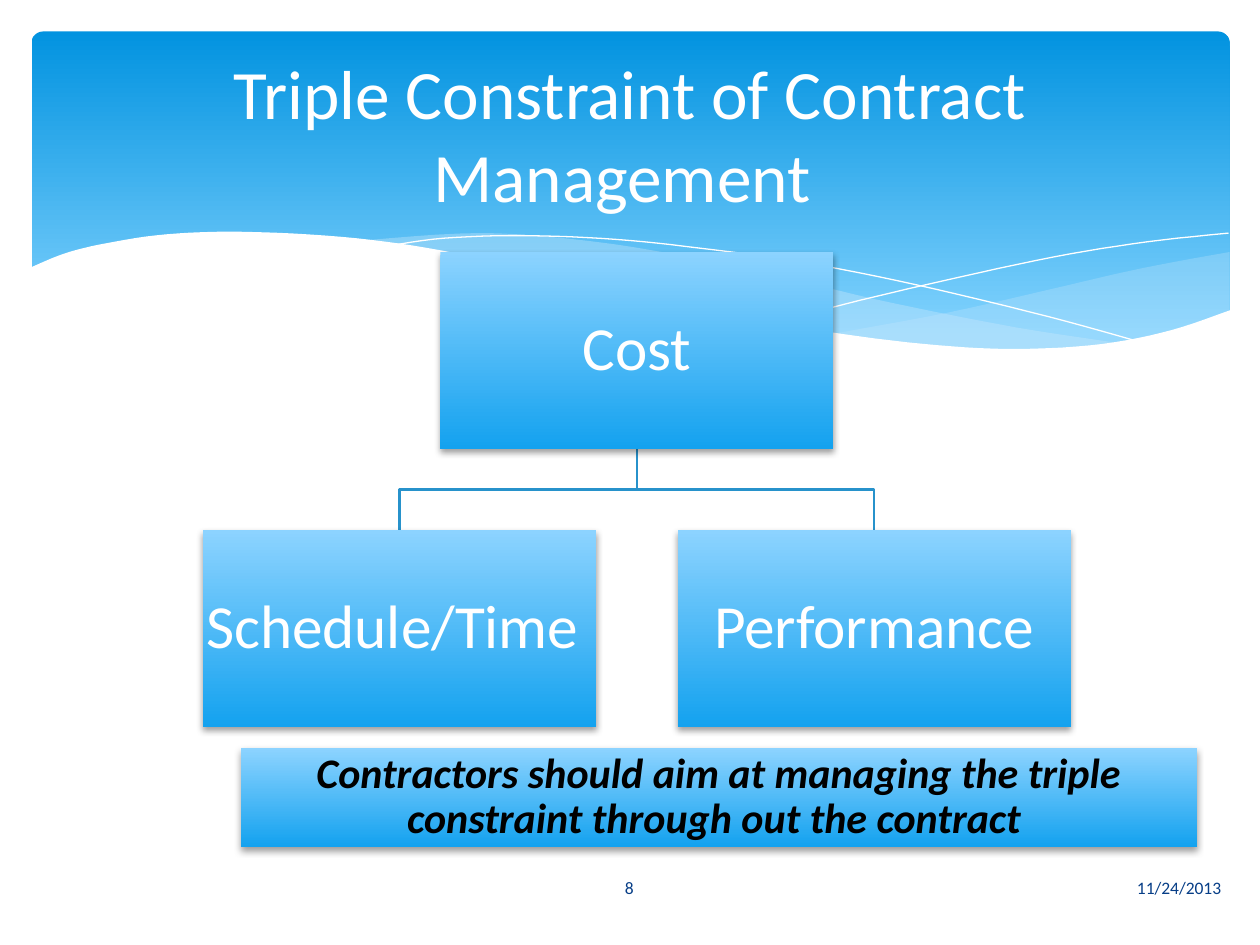
import pptx
import pptx.util
from lxml import etree
from pptx.dml.color import RGBColor
from pptx.enum.shapes import MSO_SHAPE
from pptx.enum.text import MSO_ANCHOR, MSO_AUTO_SIZE, PP_ALIGN
from pptx.oxml.ns import qn
from pptx.util import Inches, Pt

WHITE = RGBColor(0xFF, 0xFF, 0xFF)
BLACK = RGBColor(0x00, 0x00, 0x00)
NAVY = RGBColor(0x07, 0x3E, 0x87)
BANNER_TOP = RGBColor(0x02, 0x93, 0xE0)
BANNER_END = RGBColor(0x83, 0xD3, 0xFE)
MIST = RGBColor(0xC6, 0xE7, 0xFC)
BOX_TOP = RGBColor(0x8C, 0xD3, 0xFF)
BOX_END = RGBColor(0x14, 0xA2, 0xEF)
BRANCH = RGBColor(0x27, 0x92, 0xCB)
FONT = "Calibri"
WIDTH, HEIGHT = 10, 7.5

# Wave curves, on a grid with ten units across the slide.
RIGHT_BAND = [
    [(9.76, 2), (9.06, 2.13), (8.32, 2.3), (7.53, 2.48), (6.61, 2.65)],
    [(6.61, 2.65), (7.19, 2.72), (7.81, 2.77), (8.44, 2.77), (8.97, 2.7),
     (9.42, 2.59), (9.76, 2.47)],
]
LONG_BAND = [
    [(8.93, 2.73), (8.07, 2.6), (7.06, 2.4), (6.29, 2.22), (5.41, 2.03),
     (4.65, 1.91), (3.8, 1.85), (2.86, 1.91)],
    [(2.86, 1.91), (3.62, 2.03), (4.49, 2.22), (5.3, 2.4), (6.18, 2.58),
     (6.95, 2.7), (7.73, 2.77), (8.38, 2.78), (8.93, 2.73)],
]
FALLING_LINE = [(3.09, 1.95), (3.53, 1.89), (4.16, 1.87), (4.89, 1.9), (5.56, 1.97),
                (6.36, 2.08), (7.27, 2.26), (8.31, 2.51), (9.07, 2.72)]
RISING_LINE = [(6.13, 2.57), (6.72, 2.41), (7.48, 2.23), (8.36, 2.04), (9.1, 1.92),
               (9.75, 1.85)]
LOWER_WAVE = [
    [(9.77, 2.46), (9.3, 2.62), (8.75, 2.73), (8.09, 2.77), (7.44, 2.74), (6.68, 2.65),
     (5.79, 2.5), (5.03, 2.33), (4.18, 2.13), (3.4, 1.97), (2.71, 1.88), (1.93, 1.84),
     (1.32, 1.86), (0.85, 1.93), (0.52, 2.01), (0.23, 2.13)],
    [(0.23, 3.29), (9.77, 3.29)],
]


def smooth(knots, steps=6):
    """Points of a Catmull-Rom curve through the knots."""
    if len(knots) < 3:
        return knots
    padded = [knots[0], *knots, knots[-1]]
    points = [knots[0]]
    for a, b, c, d in zip(padded, padded[1:], padded[2:], padded[3:]):
        for step in range(1, steps + 1):
            t = step / steps
            points.append(tuple(
                0.5 * (2 * q + (r - p) * t + (2 * p - 5 * q + 4 * r - s) * t ** 2
                       + (3 * q - p - 3 * r + s) * t ** 3)
                for p, q, r, s in zip(a, b, c, d)))
    return points


def outline(page, points, close=False):
    points = [(x * 1000, y * 1000) for x, y in points]
    builder = page.shapes.build_freeform(*points[0], scale=Inches(1) / 1000)
    builder.add_line_segments(points[1:], close=close)
    shape = builder.convert_to_shape()
    shape.shadow.inherit = False
    return shape


def stroke(page, points, color, width):
    shape = outline(page, points)
    shape.fill.background()
    shape.line.color.rgb = color
    shape.line.width = Pt(width)


def gradient(shape, first, last, end=1.0):
    shape.fill.gradient()
    shape.fill.gradient_angle = 270
    for stop, color, position in zip(shape.fill.gradient_stops, (first, last), (0, end)):
        stop.color.rgb = color
        stop.position = position
    shape.line.fill.background()


def soft_shadow(shape):
    shape.shadow.inherit = False
    effects = shape.element.spPr.find(qn("a:effectLst"))
    shadow = etree.SubElement(effects, qn("a:outerShdw"), blurRad=str(Pt(4)),
                              dist=str(Pt(2)), dir="5400000", rotWithShape="0")
    color = etree.SubElement(shadow, qn("a:srgbClr"), val=str(BLACK))
    etree.SubElement(color, qn("a:alpha"), val="38000")


def write(shape, text, size, color, align=PP_ALIGN.CENTER, strong=False):
    frame = shape.text_frame
    frame.word_wrap = True
    frame.auto_size = MSO_AUTO_SIZE.NONE
    frame.vertical_anchor = MSO_ANCHOR.MIDDLE
    para = frame.paragraphs[0]
    para.alignment = align
    span = para.add_run()
    span.text = text
    span.font.name = FONT
    span.font.size = Pt(size)
    span.font.color.rgb = color
    span.font.bold = span.font.italic = strong


def place_banner(page, box):
    left, top, width, height = box
    unit = width / 10

    def located(knots):
        return [(left + x * unit, top + y * unit) for x, y in smooth(knots)]

    panel = page.shapes.add_shape(
        MSO_SHAPE.ROUNDED_RECTANGLE, Inches(left + 0.25 * unit), Inches(top + 0.25 * unit),
        Inches(9.51 * unit), Inches(2.7 * unit))
    panel.adjustments[0] = 0.034
    panel.shadow.inherit = False
    gradient(panel, BANNER_TOP, BANNER_END, 0.9)

    def wave(curves, color, opacity):
        points = [point for knots in curves for point in located(knots)]
        shape = outline(page, points, close=True)
        shape.fill.solid()
        shape.fill.fore_color.rgb = color
        shape.line.fill.background()
        if opacity < 100:
            tint = shape.element.spPr.find(qn("a:solidFill"))[0]
            etree.SubElement(tint, qn("a:alpha"), val=str(opacity * 1000))

    wave(RIGHT_BAND, MIST, 29)
    wave(LONG_BAND, MIST, 40)
    for knots in (FALLING_LINE, RISING_LINE):
        stroke(page, located(knots), WHITE, 0)
    wave(LOWER_WAVE, WHITE, 100)


def place_label(page, box, text, size, color, strong=False):
    shape = page.shapes.add_shape(MSO_SHAPE.RECTANGLE, *map(Inches, box))
    gradient(shape, BOX_TOP, BOX_END)
    soft_shadow(shape)
    write(shape, text, size, color, strong=strong)
    frame = shape.text_frame
    frame.margin_left = frame.margin_right = Inches(0.02)
    frame.margin_top = frame.margin_bottom = Inches(0.02)
    frame.paragraphs[0].line_spacing = 0.9


def place_hierarchy(page, box, root, children):
    """One root above a row of two children, joined by square branches."""
    left, top, width, height = box
    label_width, label_height = width * 0.453, height * 0.414
    center = left + width / 2
    root_bottom, child_top = top + label_height, top + height - label_height
    middle = (root_bottom + child_top) / 2
    child_lefts = [left, left + width - label_width]
    for child_left in reversed(child_lefts):
        child_center = child_left + label_width / 2
        stroke(page, [(center, root_bottom), (center, middle), (child_center, middle),
                      (child_center, child_top)], BRANCH, 1.25)
    places = [(center - label_width / 2, top)] + [(x, child_top) for x in child_lefts]
    for (x, y), text in zip(places, [root, *children]):
        place_label(page, (x, y, label_width, label_height), text, 35, WHITE)


def place_title(page, box, text):
    title = page.shapes.title
    title.left, title.top, title.width, title.height = map(Inches, box)
    write(title, text, 39.6, WHITE)
    title.element.getparent().append(title.element)


def place_footer(page, box, number, date):
    left, top, width, height = box
    parts = [(number, 0, 0.234, PP_ALIGN.CENTER), (date, 0.238, 0.762, PP_ALIGN.RIGHT)]
    for text, offset, share, align in parts:
        field = page.shapes.add_textbox(Inches(left + offset * width), Inches(top),
                                        Inches(share * width), Inches(height))
        write(field, text, 10, NAVY, align)


def main():
    deck = pptx.Presentation()
    deck.slide_width, deck.slide_height = Inches(WIDTH), Inches(HEIGHT)
    page = deck.slides.add_slide(deck.slide_layouts[5])
    place_banner(page, (0, 0, WIDTH, HEIGHT))
    place_hierarchy(page, (1.61, 2, 6.89, 3.77), "Cost", ["Schedule/Time ", "Performance"])
    place_footer(page, (4.36, 6.84, 5.43, 0.4), "8", "11/24/2013")
    place_title(page, (0.5, 0.37, 9, 1.37), "Triple Constraint of Contract Management ")
    place_label(page, (1.91, 5.94, 7.59, 0.78),
                "Contractors should aim at managing the triple constraint "
                "through out the contract ", 24, BLACK, strong=True)
    deck.save("out.pptx")


if __name__ == "__main__":
    main()
